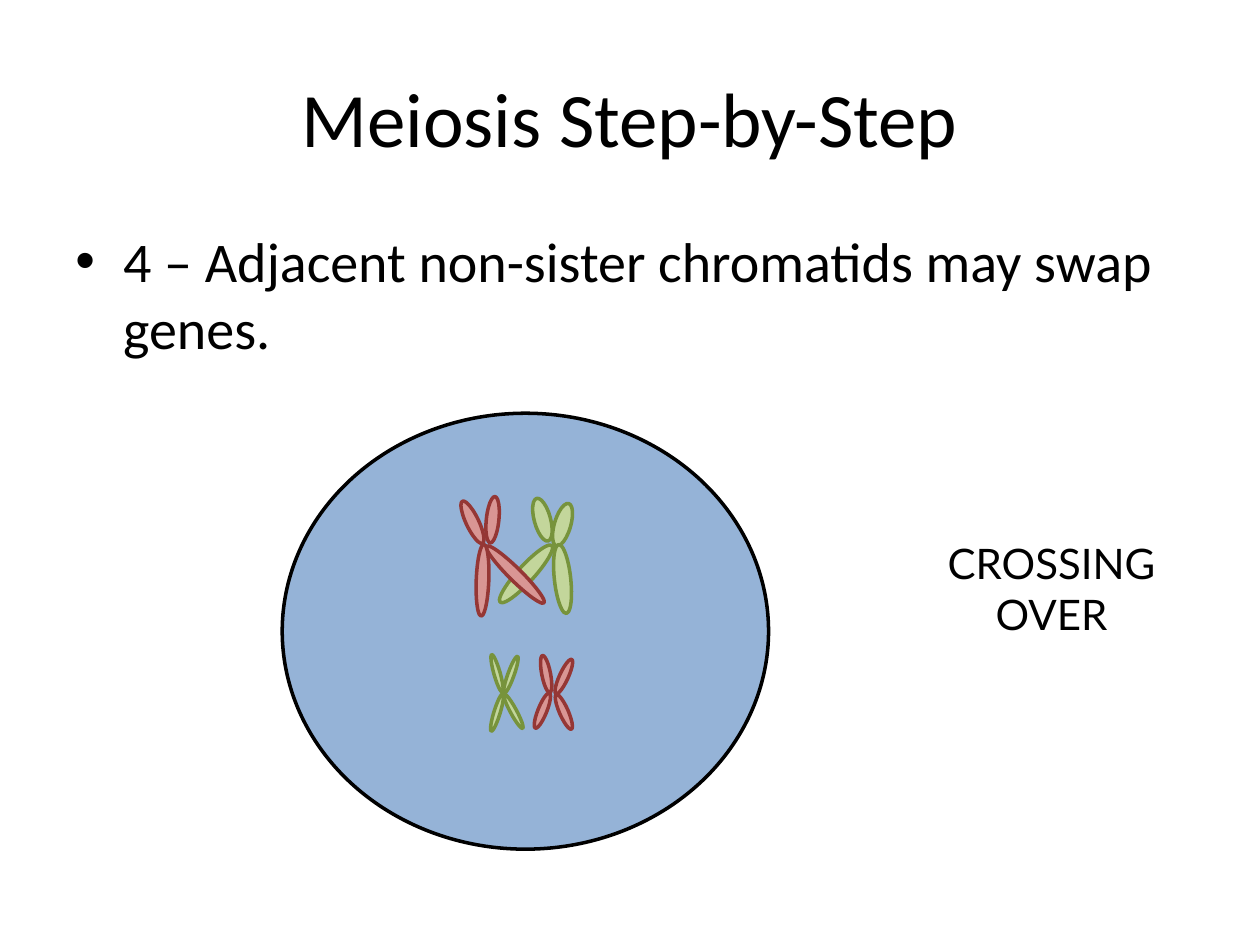
from dataclasses import dataclass
from lxml import etree
from pptx import Presentation
from pptx import util as u
from pptx.dml.color import RGBColor
from pptx.enum import shapes, text
from pptx.oxml import ns


@dataclass(frozen=True)
class Theme:
    ink: str = "000000"
    cell: str = "95B3D7"
    green: tuple = ("C3D69B", "77933C")
    red: tuple = ("D99694", "953735")
    font: str = "Calibri"
    tag: str = "Lato"
    head: int = 44
    body: int = 32
    note: int = 24
    line: int = 2


def write(frame, words, *, size, font, color, align=text.PP_ALIGN.LEFT,
          anchor=text.MSO_ANCHOR.TOP, wrap=True, bullet=None, indent=0.38):
    frame.word_wrap = wrap
    frame.vertical_anchor = anchor
    para = frame.paragraphs[0]
    para.text = words
    para.alignment = align
    if bullet:
        props = para._p.get_or_add_pPr()
        props.set("marL", str(u.Inches(indent)))
        props.set("indent", str(-u.Inches(indent)))
        etree.SubElement(props, ns.qn("a:buFont")).set("typeface", "Arial")
        etree.SubElement(props, ns.qn("a:buChar")).set("char", bullet)
    for run in para.runs:
        run.font.size = u.Pt(size)
        run.font.name = font
        run.font.color.rgb = RGBColor.from_string(color)


class Board:
    cols, rows = 100, 75

    def __init__(self, deck, theme):
        self.theme = theme
        self.wide, self.high = deck.slide_width, deck.slide_height
        self.slide = deck.slides.add_slide(deck.slide_layouts[6])

    def place(self, left, top, width, height):
        col, row = self.wide / self.cols, self.high / self.rows
        return [round(n) for n in (left * col, top * row, width * col, height * row)]

    def label(self, box, words, **style):
        frame = self.slide.shapes.add_textbox(*self.place(*box)).text_frame
        write(frame, words, color=self.theme.ink, **style)

    def oval(self, box, fill, line, turn=0, group=None):
        home = group or self.slide
        shape = home.shapes.add_shape(shapes.MSO_SHAPE.OVAL, *self.place(*box))
        shape.shadow.inherit = False
        shape.rotation = turn
        shape.fill.solid()
        shape.fill.fore_color.rgb = RGBColor.from_string(fill)
        shape.line.color.rgb = RGBColor.from_string(line)
        shape.line.width = u.Pt(self.theme.line)

    def chromosome(self, colors, width, arms):
        group = self.slide.shapes.add_group_shape()
        for left, top, length, turn in arms:
            self.oval((left, top, width, length), *colors, turn, group.shapes and group)


def main():
    deck = Presentation()
    deck.slide_width, deck.slide_height = u.Inches(10), u.Inches(7.5)
    theme = Theme()
    board = Board(deck, theme)
    mid = text.PP_ALIGN.CENTER

    board.label((5, 3, 90, 12.5), "Meiosis Step-by-Step", size=theme.head,
                font=theme.font, align=mid, anchor=text.MSO_ANCHOR.MIDDLE)
    board.label((5, 17.5, 90, 49.5), "4 – Adjacent non-sister chromatids may swap genes.",
                size=theme.body, font=theme.font, bullet="•")
    board.oval((22.4, 32.8, 38.6, 34.6), theme.cell, theme.ink)

    pairs = [
        (theme.green, 1.3, [(42.4, 39.5, 3.5, 344.9), (44, 39.9, 3.5, 16.3),
                            (44, 43.2, 5.5, 353.7), (41.1, 42.5, 6.1, 42.4)]),
        (theme.green, 0.5, [(39.2, 51.9, 3.1, 344.1), (40.3, 52, 3.1, 19.8),
                            (39.2, 55, 3.1, 17.1), (40.5, 54.9, 3.1, 331.6)]),
        (theme.red, 1, [(37, 39.6, 3.7, 334.5), (38.6, 39.4, 3.7, 5.9),
                        (40.4, 42.4, 6.4, 314.7), (37.8, 43.2, 5.7, 2.2)]),
        (theme.red, 0.7, [(43, 52, 3, 348.9), (44.4, 52.2, 3, 24.6),
                          (42.7, 54.9, 3, 21.9), (44.4, 55, 3, 336.4)]),
    ]
    for colors, width, arms in pairs:
        board.chromosome(colors, width, arms)

    board.label((73.9, 42.2, 19.1, 9.1), "CROSSING\vOVER", size=theme.note,
                font=theme.tag, align=mid, wrap=False)
    deck.save("out.pptx")


if __name__ == "__main__":
    main()
